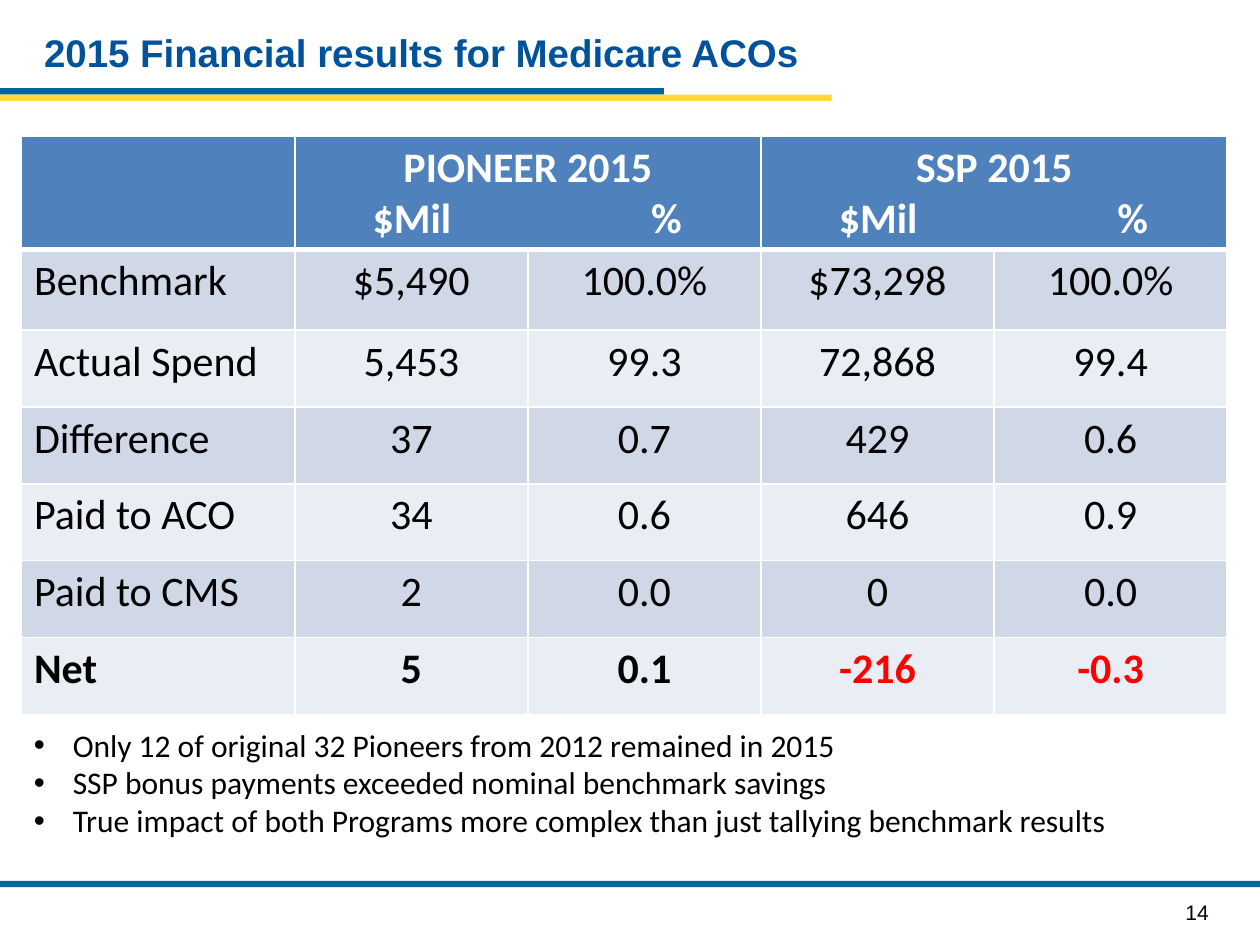
from pptx import Presentation, util as u
from pptx.dml.color import RGBColor
from pptx.enum import shapes, text
from pptx.oxml.ns import qn
from lxml import etree

BLUE, YELLOW, BLACK, WHITE, RED = "006699", "FFD937", "000000", "FFFFFF", "FF0000"
HEADER_FILL, BAND_FILLS = "4F81BD", ("D0D8E8", "E9EDF4")
LABEL_WIDTH, VALUE_WIDTH = 2.17, 1.85
HEADER_HEIGHT, FIRST_HEIGHT, ROW_HEIGHT = 0.9, 0.64, 0.61
BAR_HEIGHT = 0.05

PROGRAMS = ["PIONEER 2015", "SSP 2015"]
ROWS = [
    ["Benchmark", "$5,490", "100.0%", "$73,298", "100.0%"],
    ["Actual Spend", "5,453", "99.3", "72,868", "99.4"],
    ["Difference", "37", "0.7", "429", "0.6"],
    ["Paid to ACO", "34", "0.6", "646", "0.9"],
    ["Paid to CMS", "2", "0.0", "0", "0.0"],
    ["Net", "5", "0.1", "-216", "-0.3"],
]
NOTES = [
    "Only 12 of original 32 Pioneers from 2012 remained in 2015",
    "SSP bonus payments exceeded nominal benchmark savings",
    "True impact of both Programs more complex than just tallying benchmark results",
]


def color(value):
    return RGBColor.from_string(value)


def add_run(paragraph, words, size, fill=BLACK, bold=False, font="Calibri"):
    run = paragraph.add_run()
    run.text = words
    run.font.name, run.font.size, run.font.bold = font, u.Pt(size), bold
    run.font.color.rgb = color(fill)


def add_bar(slide, top, width, fill):
    shape = slide.shapes.add_shape(shapes.MSO_SHAPE.RECTANGLE, 0, u.Inches(top),
                                   u.Inches(width), u.Inches(BAR_HEIGHT))
    shape.shadow.inherit = False
    shape.fill.solid()
    shape.fill.fore_color.rgb = color(fill)
    shape.line.fill.background()


def add_text_box(slide, left, top, width, height):
    box = slide.shapes.add_textbox(*map(u.Inches, (left, top, width, height)))
    box.text_frame.word_wrap = True
    return box.text_frame


def set_title(slide, words):
    title = slide.shapes.title
    title.left, title.top, title.width, title.height = map(u.Inches, (0.25, 0.13, 9.5, 0.57))
    title.text_frame.vertical_anchor = text.MSO_ANCHOR.MIDDLE
    paragraph = title.text_frame.paragraphs[0]
    paragraph.alignment = text.PP_ALIGN.LEFT
    add_run(paragraph, words, 22, "00539B", True, "Arial")


def style_cell(cell, fill, bottom=1):
    """White borders first, then the fill, as the schema orders them."""
    properties = cell._tc.get_or_add_tcPr()
    for side, points in (("L", 1), ("R", 1), ("T", 1), ("B", bottom)):
        line = etree.SubElement(properties, qn("a:ln" + side), w=str(u.Pt(points)))
        solid = etree.SubElement(line, qn("a:solidFill"))
        etree.SubElement(solid, qn("a:srgbClr"), val=WHITE)
    cell.fill.solid()
    cell.fill.fore_color.rgb = color(fill)


def add_tab_stops(paragraph, positions):
    tabs = etree.SubElement(paragraph._p.get_or_add_pPr(), qn("a:tabLst"))
    for position in positions:
        etree.SubElement(tabs, qn("a:tab"), pos=str(u.Inches(position)), algn="ctr")


def fill_header(table):
    for cell in table.rows[0].cells:
        style_cell(cell, HEADER_FILL, bottom=3)
    for index, program in enumerate(PROGRAMS):
        column = 1 + 2 * index
        cell = table.cell(0, column)
        cell.merge(table.cell(0, column + 1))
        heading = cell.text_frame.paragraphs[0]
        heading.alignment = text.PP_ALIGN.CENTER
        add_run(heading, program, 24, WHITE, True)
        # Unit labels sit on centred tab stops
        units = cell.text_frame.add_paragraph()
        units.alignment = text.PP_ALIGN.LEFT
        add_tab_stops(units, (0.83, 2.85))
        add_run(units, "\t$Mil\t%", 24, WHITE, True)


def fill_body(table):
    for row, values in enumerate(ROWS, 1):
        for column, value in enumerate(values):
            cell = table.cell(row, column)
            style_cell(cell, BAND_FILLS[(row - 1) % 2], bottom=1)
            paragraph = cell.text_frame.paragraphs[0]
            paragraph.alignment = text.PP_ALIGN.CENTER if column else text.PP_ALIGN.LEFT
            add_run(paragraph, value, 24, RED if value.startswith("-") else BLACK,
                    bold=values[0] == "Net")


def add_results_table(slide):
    widths = [LABEL_WIDTH] + [VALUE_WIDTH] * 4
    heights = [HEADER_HEIGHT, FIRST_HEIGHT] + [ROW_HEIGHT] * (len(ROWS) - 1)
    frame = slide.shapes.add_table(len(heights), len(widths), *map(
        u.Inches, (0.17, 1.08, sum(widths), sum(heights))))
    table = frame.table
    for column, width in zip(table.columns, widths):
        column.width = u.Inches(width)
    for row, height in zip(table.rows, heights):
        row.height = u.Inches(height)
    fill_header(table)
    fill_body(table)


def add_notes_list(slide):
    frame = add_text_box(slide, 0.17, 5.71, 9.5, 1.01)
    for index, note in enumerate(NOTES):
        paragraph = frame.add_paragraph() if index else frame.paragraphs[0]
        properties = paragraph._p.get_or_add_pPr()
        properties.set("marL", str(u.Inches(0.31)))
        properties.set("indent", str(-u.Inches(0.31)))
        etree.SubElement(properties, qn("a:buFont"), typeface="Arial")
        etree.SubElement(properties, qn("a:buChar"), char="•")
        add_run(paragraph, note, 18)


def main():
    presentation = Presentation()
    presentation.slide_width, presentation.slide_height = u.Inches(10), u.Inches(7.5)
    slide = presentation.slides.add_slide(presentation.slide_layouts[5])

    # Rules under the title and above the footer
    add_bar(slide, 0.75, 6.6, YELLOW)
    add_bar(slide, 0.7, 5.27, BLUE)
    add_bar(slide, 6.99, 10, BLUE)

    # Page number
    number = add_text_box(slide, 9.31, 7.09, 0.49, 0.3)
    add_run(number.paragraphs[0], "14", 12, font="Arial")

    # Content
    set_title(slide, "2015 Financial results for Medicare ACOs")
    add_results_table(slide)
    add_notes_list(slide)
    presentation.save("out.pptx")


if __name__ == "__main__":
    main()
